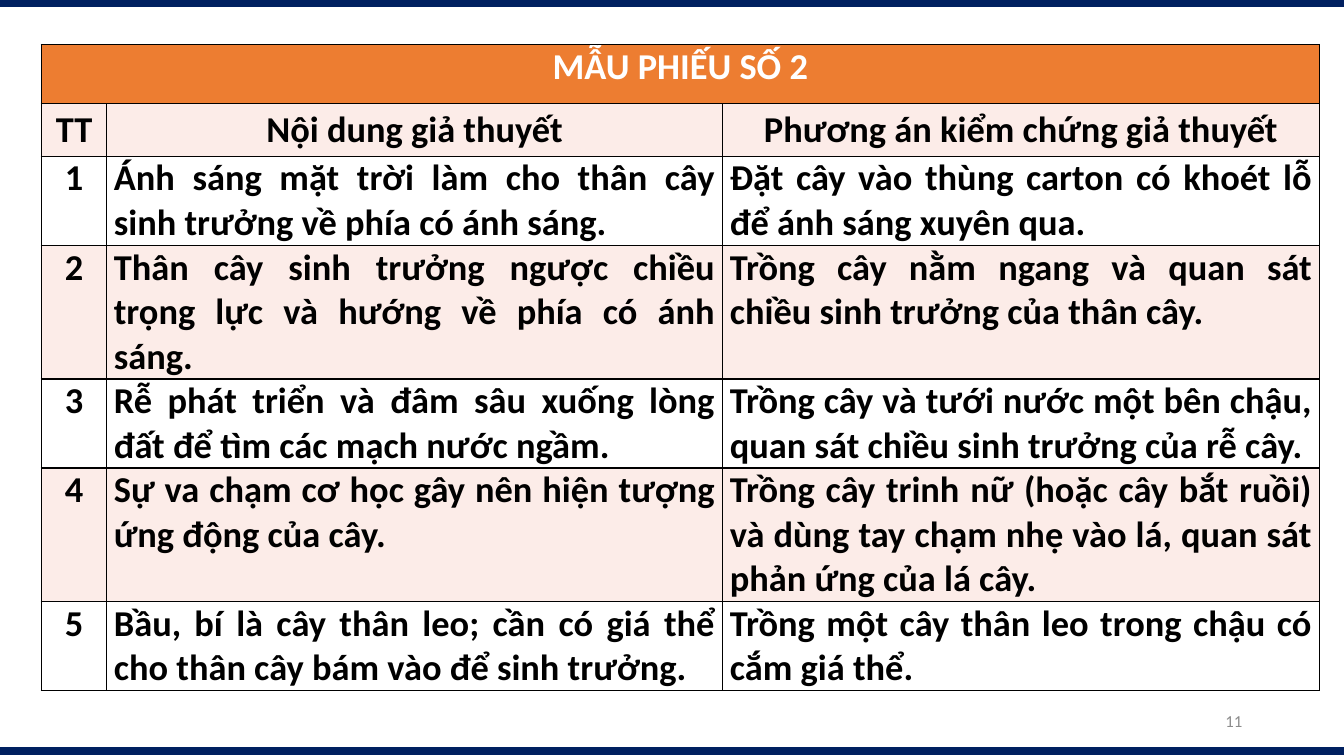
import pptx
import pptx.dml.color
import pptx.enum.shapes
import pptx.enum.text
import pptx.oxml
import pptx.oxml.ns
import pptx.util

RGBColor = pptx.dml.color.RGBColor
ALIGN = pptx.enum.text.PP_ALIGN
ANCHOR = pptx.enum.text.MSO_ANCHOR

NAVY = RGBColor(0x00, 0x20, 0x60)
ORANGE = RGBColor(0xED, 0x7D, 0x31)
PINK = RGBColor(0xFC, 0xEC, 0xE8)
WHITE = RGBColor(0xFF, 0xFF, 0xFF)
BLACK = RGBColor(0x00, 0x00, 0x00)
GREY = RGBColor(0x8C, 0x8C, 0x8C)

EMU_PER_PX = 9144  # 100 px to the inch
SLIDE_W, SLIDE_H = 1333, 750

TITLE = "MẪU PHIẾU SỐ 2"
HEADINGS = ("TT", "Nội dung giả thuyết", "Phương án kiểm chứng giả thuyết")
HYPOTHESES = [
    ("Ánh sáng mặt trời làm cho thân cây sinh trưởng về phía có ánh sáng.",
     "Đặt cây vào thùng carton có khoét lỗ để ánh sáng xuyên qua."),
    ("Thân cây sinh trưởng ngược chiều trọng lực và hướng về phía có ánh sáng.",
     "Trồng cây nằm ngang và quan sát chiều sinh trưởng của thân cây."),
    ("Rễ phát triển và đâm sâu xuống lòng đất để tìm các mạch nước ngầm.",
     "Trồng cây và tưới nước một bên chậu, quan sát chiều sinh trưởng của rễ cây."),
    ("Sự va chạm cơ học gây nên hiện tượng ứng động của cây.",
     "Trồng cây trinh nữ (hoặc cây bắt ruồi) và dùng tay chạm nhẹ vào lá, "
     "quan sát phản ứng của lá cây."),
    ("Bầu, bí là cây thân leo; cần có giá thể cho thân cây bám vào để sinh trưởng.",
     "Trồng một cây thân leo trong chậu có cắm giá thể."),
]
COL_WIDTHS = (65, 611, 592)
ROW_HEIGHTS = (59, 52, 83, 83, 83, 125, 83)


def px(n):
    return pptx.util.Emu(n * EMU_PER_PX)


class SlideBuilder:
    font = "Calibri"
    table_size = 26

    def __init__(self, slide):
        self.s = slide

    def style(self, p, size, color, align, bold=False):
        p.alignment = align
        for r in p.runs:
            r.font.name = self.font
            r.font.size = pptx.util.Pt(size)
            r.font.bold = bold
            r.font.color.rgb = color

    def line(self, x1, y1, x2, y2, color, width):
        ln = self.s.shapes.add_connector(
            pptx.enum.shapes.MSO_CONNECTOR.STRAIGHT, px(x1), px(y1), px(x2), px(y2))
        ln.line.color.rgb = color
        ln.line.width = pptx.util.Pt(width)
        ln._element.spPr.append(pptx.oxml.parse_xml(
            f"<a:effectLst {pptx.oxml.ns.nsdecls('a')}/>"))

    def text(self, x, y, w, h, text, size, color, align):
        sp = self.s.shapes.add_textbox(px(x), px(y), px(w), px(h))
        tf = sp.text_frame
        tf.word_wrap = True
        tf.vertical_anchor = ANCHOR.MIDDLE
        tf.text = text
        self.style(tf.paragraphs[0], size, color, align)

    def table(self, x, y, col_widths, row_heights):
        frame = self.s.shapes.add_table(
            len(row_heights), len(col_widths), px(x), px(y),
            px(sum(col_widths)), px(sum(row_heights)))
        tbl = frame.table
        for col, w in zip(tbl.columns, col_widths):
            col.width = px(w)
        for row, h in zip(tbl.rows, row_heights):
            row.height = px(h)
        return tbl

    def cell(self, cell, text, fill, color=BLACK, align=ALIGN.CENTER, anchor=ANCHOR.TOP):
        cell.margin_left = cell.margin_right = px(7)
        cell.margin_top = cell.margin_bottom = 0
        cell.vertical_anchor = anchor
        self.borders(cell)
        cell.fill.solid()
        cell.fill.fore_color.rgb = fill
        cell.text_frame.text = text
        self.style(cell.text_frame.paragraphs[0], self.table_size, color, align, bold=True)

    def borders(self, cell):
        tc_pr = cell._tc.get_or_add_tcPr()
        for side in ("lnL", "lnR", "lnT", "lnB"):
            tc_pr.append(pptx.oxml.parse_xml(
                f'<a:{side} {pptx.oxml.ns.nsdecls("a")} w="{pptx.util.Pt(1)}">'
                f'<a:solidFill><a:srgbClr val="{BLACK}"/></a:solidFill></a:{side}>'))


def main():
    prs = pptx.Presentation()
    prs.slide_width, prs.slide_height = px(SLIDE_W), px(SLIDE_H)
    b = SlideBuilder(prs.slides.add_slide(prs.slide_layouts[6]))

    # Bands along the bottom and top edges
    b.line(SLIDE_W, 745, -5, 745, NAVY, 6)
    b.line(1335, 3, -3, 3, NAVY, 6)

    # Worksheet table: title row, headings, then numbered hypotheses
    tbl = b.table(41, 44, COL_WIDTHS, ROW_HEIGHTS)
    for col, heading in enumerate(HEADINGS):
        b.cell(tbl.cell(0, col), TITLE if col == 0 else "", ORANGE, WHITE)
        b.cell(tbl.cell(1, col), heading, PINK, anchor=ANCHOR.MIDDLE)
    tbl.cell(0, 0).merge(tbl.cell(0, len(HEADINGS) - 1))

    for number, (hypothesis, test) in enumerate(HYPOTHESES, start=1):
        row = number + 1
        fill = WHITE if number % 2 else PINK
        b.cell(tbl.cell(row, 0), str(number), fill)
        b.cell(tbl.cell(row, 1), hypothesis, fill, align=ALIGN.JUSTIFY)
        b.cell(tbl.cell(row, 2), test, fill, align=ALIGN.JUSTIFY)

    # Slide number
    b.text(942, 695, 300, 40, "11", 12, GREY, ALIGN.RIGHT)

    prs.save("out.pptx")


if __name__ == "__main__":
    main()
